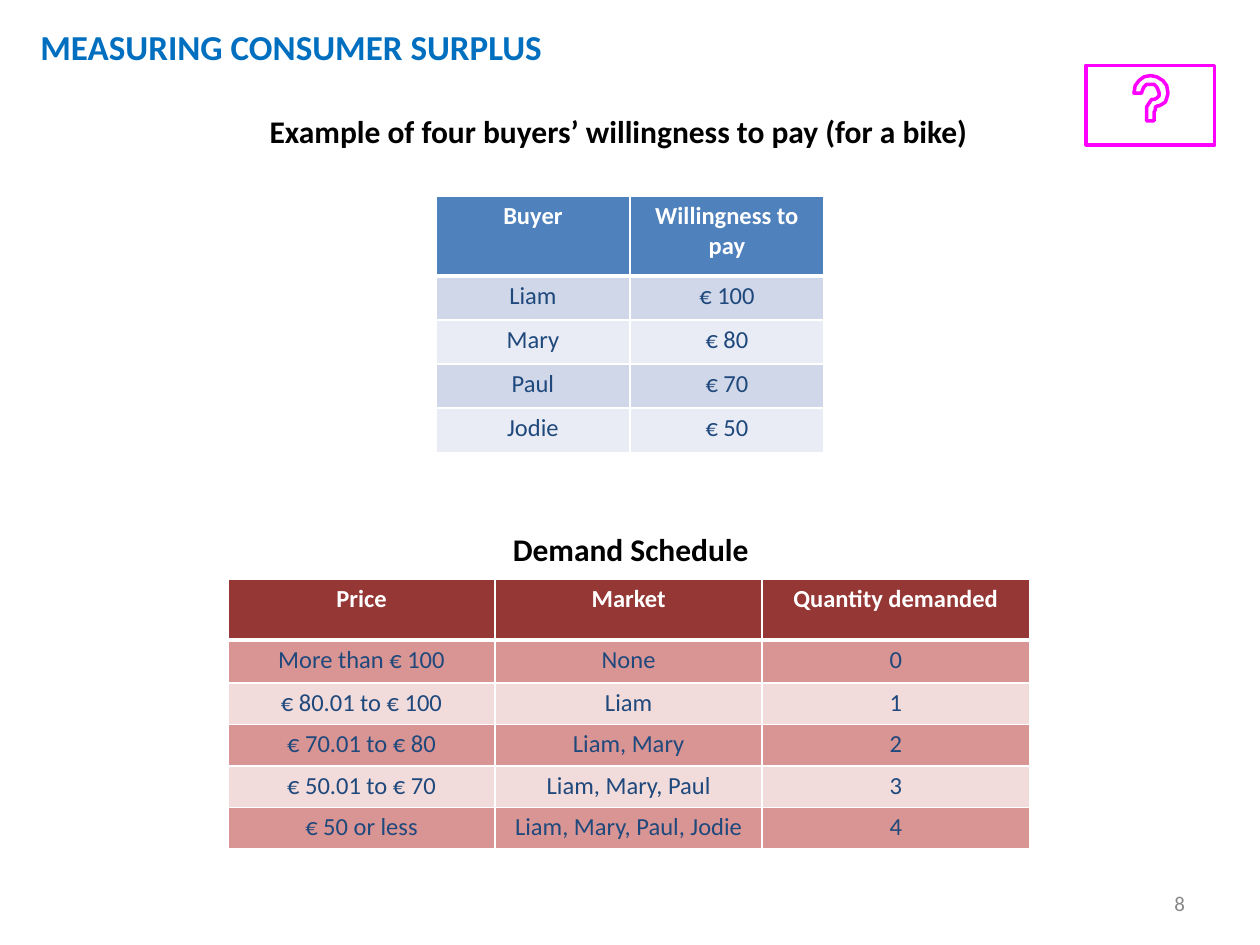
from dataclasses import dataclass

from lxml import etree
from pptx import Presentation
from pptx.dml.color import RGBColor
from pptx.enum.shapes import MSO_SHAPE
from pptx.enum.text import PP_ALIGN
from pptx.oxml.ns import qn
from pptx.util import Inches, Pt

RECTANGLE = MSO_SHAPE.RECTANGLE
CENTER = PP_ALIGN.CENTER

FONT = "Calibri"
WHITE = RGBColor(0xFF, 0xFF, 0xFF)
BLACK = RGBColor(0x00, 0x00, 0x00)
TITLE_BLUE = RGBColor(0x00, 0x6F, 0xC0)
BODY_BLUE = RGBColor(0x1F, 0x48, 0x7C)
GRAY = RGBColor(0x88, 0x88, 0x88)
MAGENTA = RGBColor(0xFF, 0x00, 0xFF)
HEAD_BLUE = RGBColor(0x4F, 0x81, 0xBC)
BAND_BLUES = (RGBColor(0xD0, 0xD7, 0xE8), RGBColor(0xE9, 0xEC, 0xF4))
HEAD_RED = RGBColor(0x94, 0x37, 0x35)
BAND_REDS = (RGBColor(0xD9, 0x95, 0x93), RGBColor(0xF1, 0xDC, 0xDB))

# Question mark outline, in hundredths of an inch
QUESTION_MARK = [
    (900, 74), (901, 68), (904, 64), (908, 61), (913, 60), (918, 61),
    (923, 64), (926, 68), (927, 74), (926, 78), (925, 81), (922, 83),
    (920, 84), (919, 84), (917, 85), (917, 87), (916, 89), (916, 96),
    (910, 96), (910, 89), (910, 85), (912, 82), (914, 79), (916, 79),
    (918, 78), (919, 77), (920, 76), (920, 74), (919, 71), (918, 69),
    (916, 67), (913, 67), (910, 67), (908, 69), (907, 71), (906, 74),
]


@dataclass
class Label:
    text: str
    left: float
    top: float
    width: float
    height: float
    size: float
    color: RGBColor
    indent: float = 0.01
    inset_top: float = 0.01
    bold: bool = True


@dataclass
class Schedule:
    left: float
    top: float
    column_width: float
    row_heights: list[float]
    head_fill: RGBColor
    band_fills: tuple[RGBColor, RGBColor]
    rows: list[list[str]]


LABELS = [
    Label("MEASURING CONSUMER SURPLUS", 0.2, 0.12, 4.41, 0.71, 20, TITLE_BLUE,
          indent=0.12, inset_top=0.08),
    Label("Example of four buyers’ willingness to pay (for a bike)",
          2.13, 0.88, 5.7, 0.33, 18, BLACK),
    Label("Demand Schedule", 4.06, 4.2, 1.95, 0.33, 18, BLACK),
    Label("8", 9.19, 7.07, 0.27, 0.2, 12, GRAY,
          indent=0.13, inset_top=0, bold=False),
]

SCHEDULES = [
    Schedule(3.46, 1.56, 1.54, [0.63] + [0.35] * 4, HEAD_BLUE, BAND_BLUES, [
        ["Buyer", "Willingness to\npay"],
        ["Liam", "€ 100"],
        ["Mary", "€ 80"],
        ["Paul", "€ 70"],
        ["Jodie", "€ 50"],
    ]),
    Schedule(1.81, 4.6, 2.12, [0.48, 0.34] + [0.33] * 4, HEAD_RED, BAND_REDS, [
        ["Price", "Market", "Quantity demanded"],
        ["More than € 100", "None", "0"],
        ["€ 80.01 to € 100", "Liam", "1"],
        ["€ 70.01 to € 80", "Liam, Mary", "2"],
        ["€ 50.01 to € 70", "Liam, Mary, Paul", "3"],
        ["€ 50 or less", "Liam, Mary, Paul, Jodie", "4"],
    ]),
]


def style_text(frame, size: float, color: RGBColor, bold: bool) -> None:
    for paragraph in frame.paragraphs:
        for run in paragraph.runs:
            run.font.name = FONT
            run.font.size = Pt(size)
            run.font.color.rgb = color
            run.font.bold = bold


def add_label(slide, label: Label) -> None:
    box = slide.shapes.add_textbox(Inches(label.left), Inches(label.top),
                                   Inches(label.width), Inches(label.height))
    frame = box.text_frame
    frame.word_wrap = True
    frame.margin_left = Inches(label.indent)
    frame.margin_top = Inches(label.inset_top)
    frame.margin_right = frame.margin_bottom = 0
    frame.text = label.text
    style_text(frame, label.size, label.color, label.bold)


def add_borders(cell, top: float, bottom: float) -> None:
    properties = cell._tc.get_or_add_tcPr()
    for side, points in (("L", 1), ("R", 1), ("T", top), ("B", bottom)):
        line = etree.SubElement(properties, qn(f"a:ln{side}"), w=str(Pt(points)))
        fill = etree.SubElement(line, qn("a:solidFill"))
        etree.SubElement(fill, qn("a:srgbClr"), val=str(WHITE))


def add_schedule(slide, schedule: Schedule) -> None:
    columns = len(schedule.rows[0])
    table = slide.shapes.add_table(
        len(schedule.rows), columns, Inches(schedule.left), Inches(schedule.top),
        Inches(schedule.column_width * columns),
        Inches(sum(schedule.row_heights))).table
    for column in table.columns:
        column.width = Inches(schedule.column_width)
    for index, (height, texts) in enumerate(zip(schedule.row_heights, schedule.rows)):
        table.rows[index].height = Inches(height)
        is_head = index == 0
        for cell, text in zip(table.rows[index].cells, texts):
            # A thick rule separates the heading from the body
            add_borders(cell, top=3 if index == 1 else 1, bottom=3 if is_head else 1)
            cell.fill.solid()
            cell.fill.fore_color.rgb = (
                schedule.head_fill if is_head else schedule.band_fills[(index - 1) % 2])
            cell.margin_left = cell.margin_right = cell.margin_bottom = 0
            cell.margin_top = Inches(0.04)
            cell.text_frame.text = text
            for paragraph in cell.text_frame.paragraphs:
                paragraph.alignment = CENTER
            style_text(cell.text_frame, 14, WHITE if is_head else BODY_BLUE, is_head)


def outline(shape) -> None:
    shape.shadow.inherit = False
    shape.fill.background()
    shape.line.color.rgb = MAGENTA
    shape.line.width = Pt(2)


def add_question_button(slide) -> None:
    builder = slide.shapes.build_freeform(*QUESTION_MARK[0], scale=Inches(0.01))
    builder.add_line_segments(QUESTION_MARK[1:], close=True)
    outline(builder.convert_to_shape())
    outline(slide.shapes.add_shape(RECTANGLE, Inches(8.62), Inches(0.52),
                                   Inches(1.02), Inches(0.63)))


def main() -> None:
    presentation = Presentation()
    presentation.slide_width = Inches(10)
    presentation.slide_height = Inches(7.5)
    slide = presentation.slides.add_slide(presentation.slide_layouts[6])

    # Tables
    for schedule in SCHEDULES:
        add_schedule(slide, schedule)
    # Title, table headings and page number
    for label in LABELS:
        add_label(slide, label)
    # Question button in the corner
    add_question_button(slide)

    presentation.save("out.pptx")


if __name__ == "__main__":
    main()
